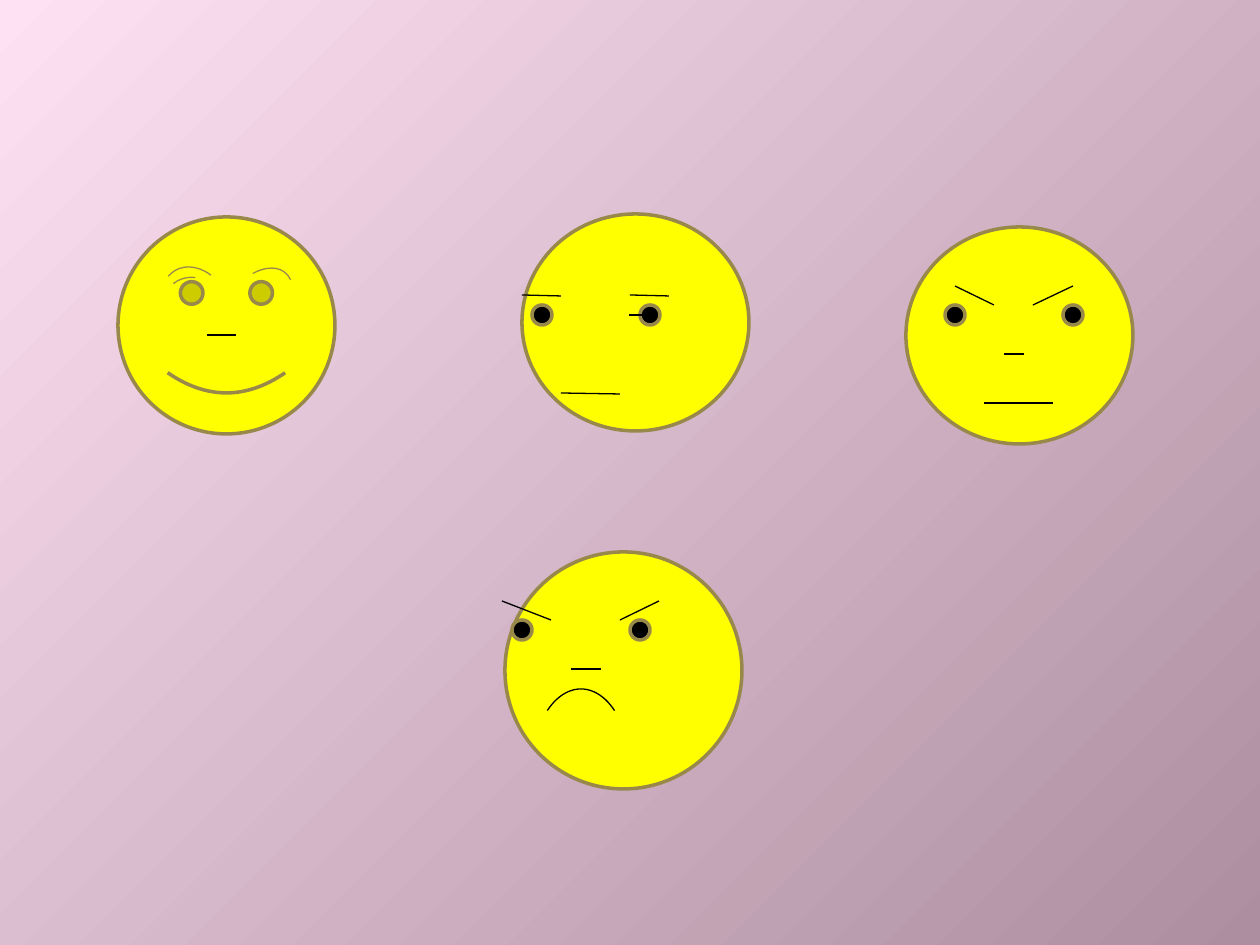
from dataclasses import dataclass

from lxml import etree
from pptx import Presentation
from pptx import util as u
from pptx.dml.color import RGBColor
from pptx.enum import shapes
from pptx.oxml import parse_xml
from pptx.oxml.ns import nsdecls, qn

EMU_PER_PX = 914400 // 126
EYE_SIZE = 20


@dataclass(frozen=True)
class Theme:
    background_start: str = "FEE1F2"
    background_end: str = "AC8EA0"
    skin: str = "FFFF00"
    outline: str = "98894B"
    ink: str = "000000"
    thick: float = 2
    thin: float = 0.75


THEME = Theme()
SMILEY = shapes.MSO_SHAPE.SMILEY_FACE
OVAL = shapes.MSO_SHAPE.OVAL

# Preset, then left, top, width, height
FACES = [
    (SMILEY, (118, 217, 217, 217)),
    (OVAL, (522, 214, 227, 217)),
    (OVAL, (906, 227, 227, 217)),
    (OVAL, (505, 552, 237, 237)),
]

# Left and top of each eye
EYES = [(532, 305), (640, 305), (945, 305), (1063, 305), (512, 620), (630, 620)]

# Start x, y and end x, y
BROWS = [
    (522, 295, 561, 296), (630, 295, 669, 296),
    (955, 286, 994, 305), (1033, 305, 1073, 286),
    (502, 601, 551, 620), (620, 620, 659, 601),
]
NOSES = [(207, 335, 236, 335), (629, 315, 658, 315),
         (1004, 354, 1024, 354), (571, 669, 601, 669)]
MOUTHS = [(561, 393, 620, 394), (984, 403, 1053, 403)]

# Box, rotation, start angle, end angle, colour
ARCS = [
    ((161, 276, 76, 102), 339.8, 259.64, 286.05, THEME.outline),
    ((161, 265, 76, 113), 339.8, 256.21, 304.68, THEME.outline),
    ((221, 262, 64, 108), 35, 234.66, 281.05, THEME.outline),
    ((532, 689, 98, 159), 0, 239.91, 300.16, THEME.ink),
]


def px(*lengths):
    return [u.Emu(length * EMU_PER_PX) for length in lengths]


def set_line(shape, color, width):
    shape.line.color.rgb = RGBColor.from_string(color)
    shape.line.width = u.Pt(width)


def paint_background(page):
    """Fill the page with a gradient spreading from its top left corner."""
    page.background.fill.solid()
    properties = page.background._cSld.bg.bgPr
    gradient = parse_xml(
        f'<a:gradFill {nsdecls("a")} rotWithShape="1"><a:gsLst>'
        f'<a:gs pos="0"><a:srgbClr val="{THEME.background_start}"/></a:gs>'
        f'<a:gs pos="100000"><a:srgbClr val="{THEME.background_end}"/></a:gs>'
        '</a:gsLst><a:path path="circle">'
        '<a:fillToRect r="100000" b="100000"/></a:path></a:gradFill>'
    )
    properties.replace(properties.find(qn("a:solidFill")), gradient)


def add_filled(page, preset, box, fill):
    shape = page.shapes.add_shape(preset, *px(*box))
    shape.shadow.inherit = False
    shape.fill.solid()
    shape.fill.fore_color.rgb = RGBColor.from_string(fill)
    set_line(shape, THEME.outline, THEME.thick)


def add_stroke(page, ends):
    stroke = page.shapes.add_connector(shapes.MSO_CONNECTOR.STRAIGHT, *px(*ends))
    set_line(stroke, THEME.ink, THEME.thin)
    etree.SubElement(stroke._element.spPr, qn("a:effectLst"))


def add_arc(page, box, rotation, start, end, color):
    arc = page.shapes.add_shape(shapes.MSO_SHAPE.ARC, *px(*box))
    arc.shadow.inherit = False
    arc.fill.background()
    arc.rotation = rotation
    # One degree is 60000 units, and an adjustment counts 100000 units as 1
    for index, angle in enumerate((start, end)):
        arc.adjustments[index] = angle * 0.6
    set_line(arc, color, THEME.thin)


def main():
    deck = Presentation()
    deck.slide_width, deck.slide_height = u.Inches(10), u.Inches(7.5)
    page = deck.slides.add_slide(deck.slide_layouts[6])
    paint_background(page)
    for preset, box in FACES:
        add_filled(page, preset, box, THEME.skin)
    for left, top in EYES:
        add_filled(page, OVAL, (left, top, EYE_SIZE, EYE_SIZE), THEME.ink)
    for ends in BROWS + NOSES + MOUTHS:
        add_stroke(page, ends)
    for arc in ARCS:
        add_arc(page, *arc)
    deck.save("out.pptx")


if __name__ == "__main__":
    main()
